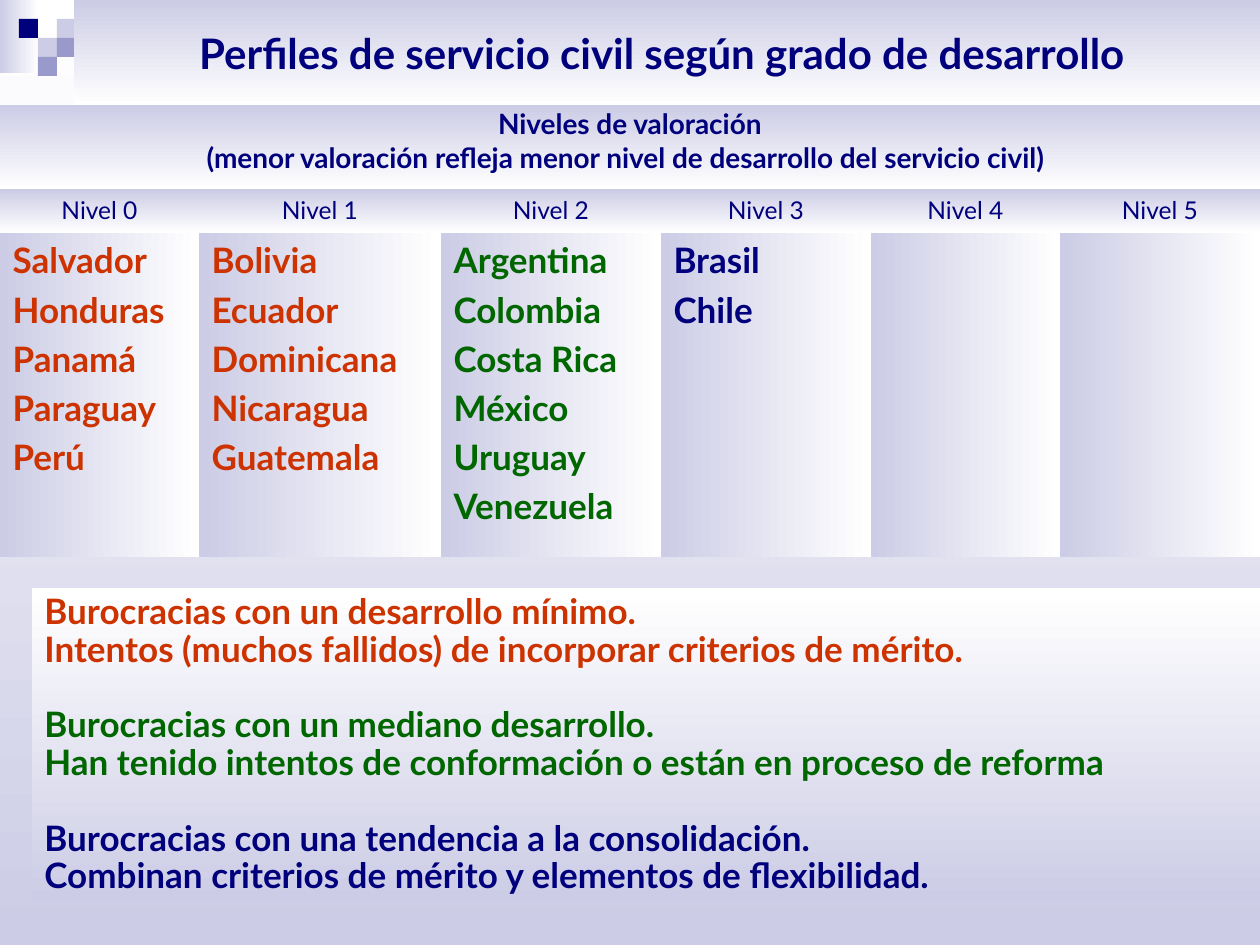
from pptx import Presentation
from pptx.dml.color import RGBColor
from pptx.enum.shapes import MSO_SHAPE
from pptx.enum.text import MSO_ANCHOR, PP_ALIGN
from pptx.util import Emu, Pt

EMU_PER_PX = 914400 / 126
FONT = "Lato"
COLORS = {
    "navy": "00007D",
    "red": "CC3300",
    "green": "006600",
    "lilac": "CCCCE6",
    "violet": "9999CC",
    "white": "FFFFFF",
    "black": "000000",
}
DOWN, RIGHT = 270, 0
NO_GRID_STYLE = "{2D5ABB26-0587-4C30-8999-92F81FD0307C}"

TITLE = "Perfiles de servicio civil según grado de desarrollo "
SCALE_HEADING = "Niveles de valoración"
SCALE_NOTE = "(menor valoración refleja menor nivel de desarrollo del servicio civil)"
COLUMN_WIDTHS = [199, 242, 220, 210, 189, 200]
ROW_HEIGHTS = [84, 44, 324]
LEVELS = [
    ("red", ["Salvador", "Honduras", "Panamá", "Paraguay", "Perú"]),
    ("red", ["Bolivia", "Ecuador", "Dominicana", "Nicaragua", "Guatemala"]),
    ("green", ["Argentina", "Colombia", "Costa Rica", "México", "Uruguay", "Venezuela"]),
    ("navy", ["Brasil", "Chile"]),
    ("navy", []),
    ("navy", []),
]
PROFILES = [
    ("red", ["Burocracias con un desarrollo mínimo.",
             "Intentos (muchos fallidos) de incorporar criterios de mérito."]),
    ("green", ["Burocracias con un mediano desarrollo.",
               "Han tenido intentos de conformación o están en proceso de reforma"]),
    ("navy", ["Burocracias con una tendencia a la consolidación.",
              "Combinan criterios de mérito y elementos de flexibilidad."]),
]
# Column and row on the square grid, with colour
MOSAIC = [(1, 1, "navy"), (3, 1, "lilac"), (2, 2, "lilac"), (3, 2, "violet"), (2, 3, "violet")]
SQUARE = 19


def px(length):
    return Emu(round(length * EMU_PER_PX))


def rgb(name):
    return RGBColor.from_string(COLORS[name])


class SlideBuilder:
    def __init__(self, slide):
        self.slide = slide

    def gradient(self, fill, start, end, angle):
        fill.gradient()
        fill.gradient_angle = angle
        for stop, color, position in zip(fill.gradient_stops, (start, end), (0, 1)):
            stop.color.rgb = rgb(color)
            stop.position = position

    def run(self, paragraph, text, size, color, bold=True):
        run = paragraph.add_run()
        run.text = text
        run.font.name = FONT
        run.font.size = Pt(size)
        run.font.bold = bold
        run.font.color.rgb = rgb(color)

    def paragraph(self, frame, align=PP_ALIGN.LEFT, spacing=1.0, before=0):
        """Return the frame's unused first paragraph, or a new one."""
        first = frame.paragraphs[0]
        paragraph = frame.add_paragraph() if first.runs else first
        paragraph.alignment = align
        paragraph.line_spacing = spacing
        paragraph.space_before = Pt(before)
        return paragraph

    def rectangle(self, left, top, width, height):
        shape = self.slide.shapes.add_shape(
            MSO_SHAPE.RECTANGLE, px(left), px(top), px(width), px(height))
        shape.shadow.inherit = False
        shape.line.fill.background()
        return shape

    def mosaic(self):
        strip = self.rectangle(0, 0, 39, 73)
        self.gradient(strip.fill, "lilac", "white", RIGHT)
        for column, row, color in MOSAIC:
            square = self.rectangle(column * SQUARE, row * SQUARE, SQUARE, SQUARE)
            square.fill.solid()
            square.fill.fore_color.rgb = rgb(color)

    def title(self, text, left, top, width, height):
        title = self.slide.shapes.title
        title.left, title.top = px(left), px(top)
        title.width, title.height = px(width), px(height)
        self.gradient(title.fill, "lilac", "white", DOWN)
        frame = title.text_frame
        frame.vertical_anchor = MSO_ANCHOR.MIDDLE
        self.run(self.paragraph(frame, PP_ALIGN.CENTER), text, 24, "navy")
        # The title covers the right edge of the mosaic
        self.slide.shapes._spTree.append(title._element)

    def levels_table(self, left, top):
        graphic = self.slide.shapes.add_table(
            len(ROW_HEIGHTS), len(COLUMN_WIDTHS), px(left), px(top),
            px(sum(COLUMN_WIDTHS)), px(sum(ROW_HEIGHTS)))
        table = graphic.table
        table.first_row = table.horz_banding = False
        table._tbl.tblPr[0].text = NO_GRID_STYLE
        for column, width in zip(table.columns, COLUMN_WIDTHS):
            column.width = px(width)
        for row, height in zip(table.rows, ROW_HEIGHTS):
            row.height = px(height)

        heading = table.cell(0, 0)
        heading.merge(table.cell(0, len(COLUMN_WIDTHS) - 1))
        self.gradient(heading.fill, "lilac", "white", DOWN)
        for text in (SCALE_HEADING, SCALE_NOTE):
            line = self.paragraph(heading.text_frame, PP_ALIGN.CENTER, 0.85)
            self.run(line, text, 16, "navy")
        self.run(line, " ", 20, "black")

        for level, (color, countries) in enumerate(LEVELS):
            label, members = table.cell(1, level), table.cell(2, level)
            self.gradient(label.fill, "lilac", "white", DOWN)
            self.gradient(members.fill, "lilac", "white", RIGHT)
            self.run(self.paragraph(label.text_frame, PP_ALIGN.CENTER),
                     f"Nivel {level}", 14, "navy", bold=False)
            for country in countries:
                self.run(self.paragraph(members.text_frame, before=4), country, 20, color)

    def profiles(self, left, top, width, height):
        box = self.slide.shapes.add_textbox(px(left), px(top), px(width), px(height))
        self.gradient(box.fill, "white", "lilac", DOWN)
        frame = box.text_frame
        frame.word_wrap = True
        for group, (color, lines) in enumerate(PROFILES):
            for index, text in enumerate(lines):
                gap = 21.6 if group and index == 0 else 0
                self.run(self.paragraph(frame, spacing=0.9, before=gap), text, 20, color)


def main():
    presentation = Presentation()
    presentation.slide_width, presentation.slide_height = px(1260), px(945)
    slide = presentation.slides.add_slide(presentation.slide_layouts[5])
    builder = SlideBuilder(slide)
    builder.gradient(slide.background.fill, "white", "lilac", DOWN)
    builder.mosaic()
    builder.title(TITLE, 74, 0, 1186, 105)
    builder.levels_table(0, 105)
    builder.profiles(32, 588, 1228, 315)
    presentation.save("out.pptx")


if __name__ == "__main__":
    main()
